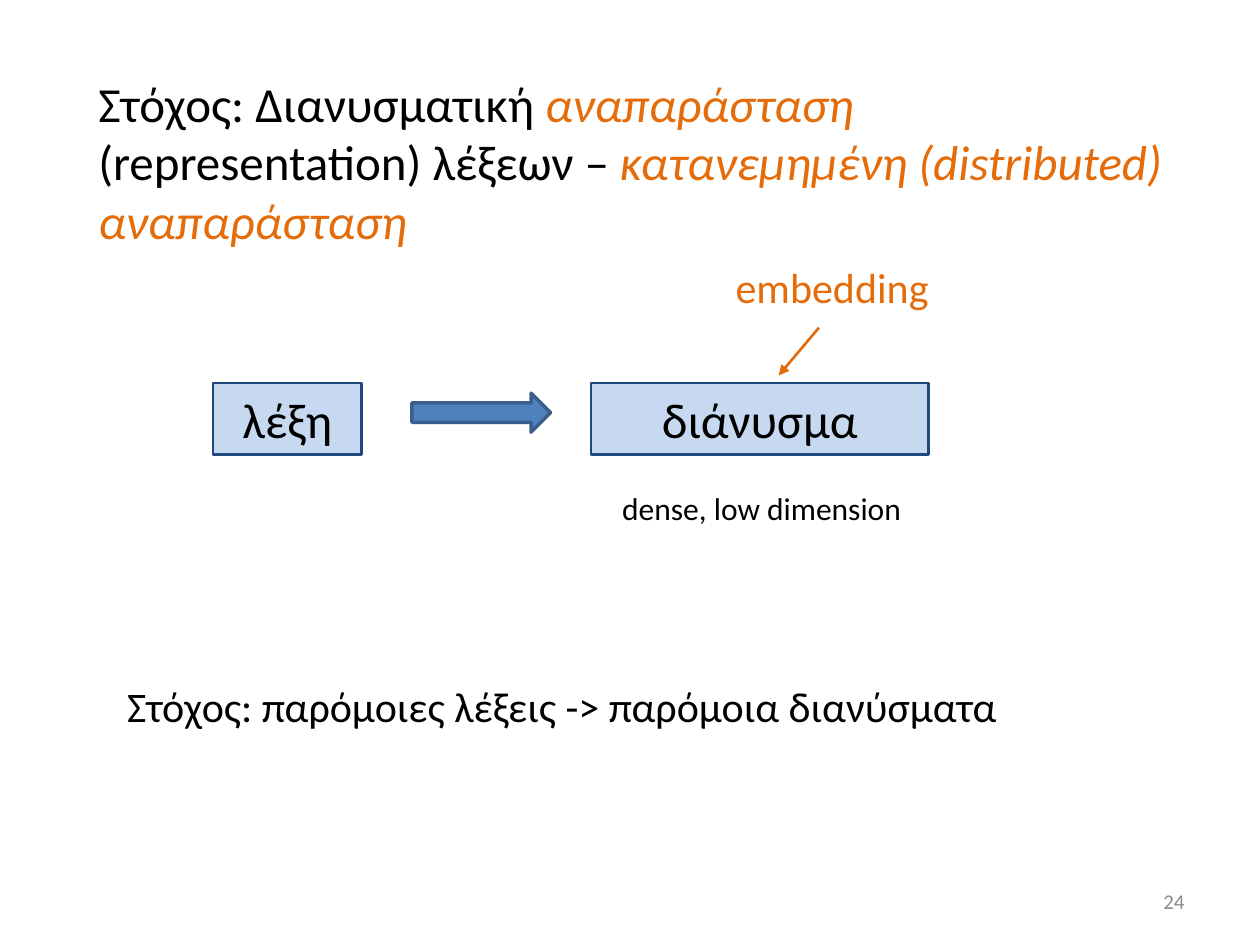
from lxml import etree
from pptx import Presentation
from pptx.dml.color import RGBColor
from pptx.enum.shapes import MSO_CONNECTOR, MSO_SHAPE
from pptx.enum.text import MSO_ANCHOR, MSO_AUTO_SIZE, PP_ALIGN
from pptx.oxml.ns import qn
from pptx.util import Inches, Pt

FONT = "Calibri"
BLACK = RGBColor(0x00, 0x00, 0x00)
ORANGE = RGBColor(0xE4, 0x6C, 0x0A)
GREY = RGBColor(0x8C, 0x8C, 0x8C)
PALE_BLUE = RGBColor(0xC6, 0xD9, 0xF1)
NAVY = RGBColor(0x1F, 0x49, 0x7D)
BLUE = RGBColor(0x4F, 0x81, 0xBD)
DARK_BLUE = RGBColor(0x3A, 0x5F, 0x8C)


def format_run(r, size, color, italic=False):
    r.font.name = FONT
    r.font.size = Pt(size)
    r.font.color.rgb = color
    r.font.italic = italic


def write_text(tf, text, size, color, align):
    tf.word_wrap = True
    tf.text = text
    p = tf.paragraphs[0]
    p.alignment = align
    format_run(p.runs[0], size, color)


def set_title(s, box, parts):
    sp = s.shapes.title
    sp.left, sp.top, sp.width, sp.height = map(Inches, box)
    tf = sp.text_frame
    tf.auto_size = MSO_AUTO_SIZE.NONE
    tf.vertical_anchor = MSO_ANCHOR.TOP
    p = tf.paragraphs[0]
    p.alignment = PP_ALIGN.LEFT
    for text, emphasised in parts:
        r = p.add_run()
        r.text = text
        format_run(r, 28, ORANGE if emphasised else BLACK, emphasised)


def add_label(s, box, text, size, color=BLACK, align=PP_ALIGN.LEFT, anchor=MSO_ANCHOR.TOP):
    tf = s.shapes.add_textbox(*map(Inches, box)).text_frame
    tf.vertical_anchor = anchor
    write_text(tf, text, size, color, align)


def add_block(s, kind, box, fill, line, width):
    sp = s.shapes.add_shape(kind, *map(Inches, box))
    sp.shadow.inherit = False
    sp.fill.solid()
    sp.fill.fore_color.rgb = fill
    sp.line.color.rgb = line
    sp.line.width = Pt(width)
    return sp


def add_term_box(s, left, width, text):
    sp = add_block(s, MSO_SHAPE.RECTANGLE, (left, 3.04, width, 0.57), PALE_BLUE, NAVY, 1.5)
    tf = sp.text_frame
    tf.vertical_anchor = MSO_ANCHOR.TOP
    write_text(tf, text, 28, BLACK, PP_ALIGN.CENTER)


def add_pointer(s, start, end):
    cn = s.shapes.add_connector(MSO_CONNECTOR.STRAIGHT, *map(Inches, start + end))
    cn.line.color.rgb = ORANGE
    cn.line.width = Pt(1.5)
    etree.SubElement(cn.line._get_or_add_ln(), qn("a:tailEnd"), type="triangle")
    etree.SubElement(cn._element.spPr, qn("a:effectLst"))


def main():
    prs = Presentation()
    prs.slide_width, prs.slide_height = Inches(10), Inches(7.5)
    s = prs.slides.add_slide(prs.slide_layouts[5])

    set_title(s, (0.68, 0.53, 8.82, 1.51), [
        ("Στόχος: Διανυσματική ", False),
        ("αναπαράσταση ", True),
        ("(representation) λέξεων – ", False),
        ("κατανεμημένη (distributed) αναπαράσταση", True),
    ])
    add_term_box(s, 1.69, 1.18, "λέξη")
    add_term_box(s, 4.69, 2.68, "διάνυσμα")
    add_block(s, MSO_SHAPE.RIGHT_ARROW, (3.27, 3.12, 1.1, 0.31), BLUE, DARK_BLUE, 2)
    add_label(s, (5.74, 2.03, 2.83, 0.5), "embedding", 24, ORANGE)
    add_pointer(s, (6.5, 2.6), (6.18, 2.98))
    add_label(s, (4.84, 3.83, 3.54, 0.4), "dense, low dimension", 18)
    add_label(s, (0.91, 5.35, 8.11, 0.5), "Στόχος: παρόμοιες λέξεις -> παρόμοια διανύσματα", 24)
    add_label(s, (7.17, 6.95, 2.33, 0.4), "24", 12, GREY, PP_ALIGN.RIGHT, MSO_ANCHOR.MIDDLE)

    prs.save("out.pptx")


if __name__ == "__main__":
    main()
